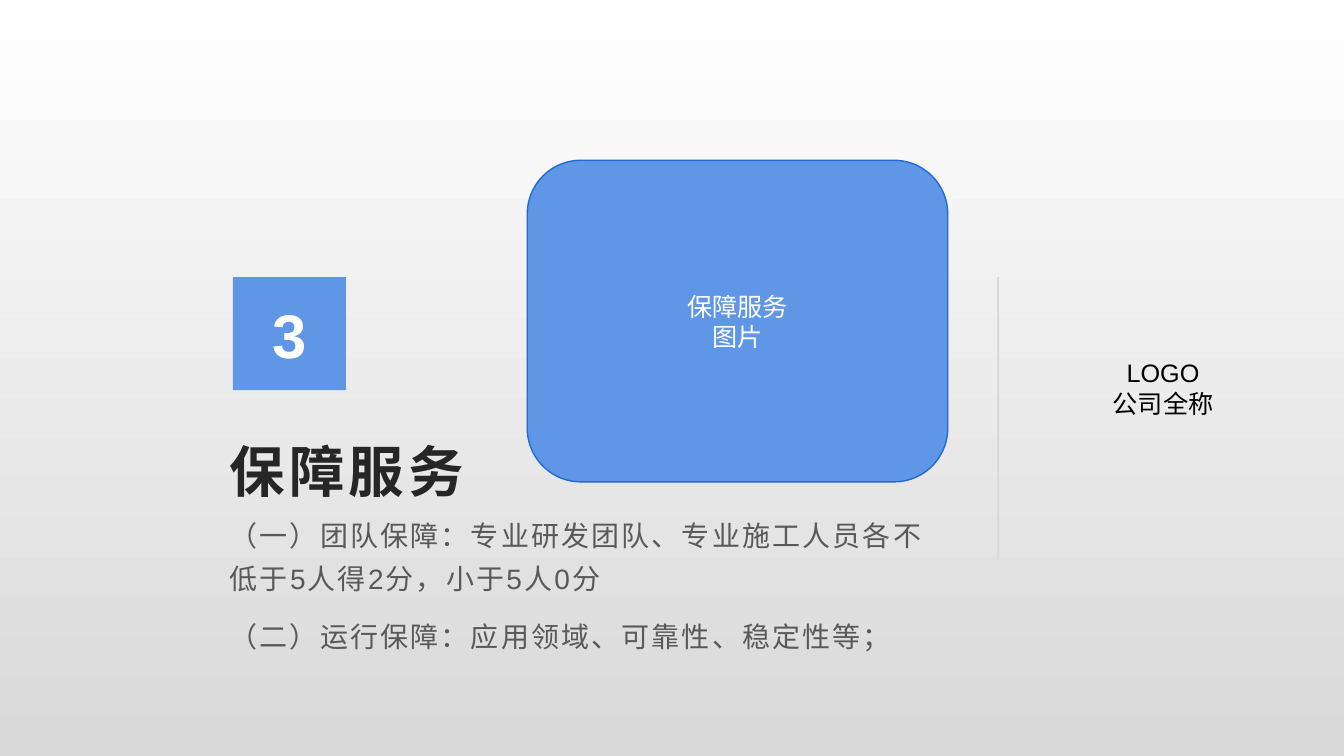
from dataclasses import dataclass

from pptx import Presentation
from pptx import util as u
from pptx.dml.color import RGBColor
from pptx.enum import shapes, text


@dataclass(frozen=True)
class Theme:
    """Colours, type sizes and font of the slide."""
    font: str = "Arial"
    accent: str = "6096E6"
    accent_edge: str = "2169D3"
    rule: str = "D9D9D9"
    white: str = "FFFFFF"
    black: str = "000000"
    heading: str = "262626"
    body: str = "595959"
    number_size: float = 44
    title_size: float = 39.6
    body_size: float = 20
    label_size: float = 18


def write(shape, content, size, color, font, bold=False, spacing=0, align=None,
          anchor=text.MSO_ANCHOR.TOP, line_spacing=None, space_after=None):
    """Fill a shape with one paragraph per line of content."""
    frame = shape.text_frame
    frame.word_wrap = True
    frame.vertical_anchor = anchor
    for index, line in enumerate(content.split("\n")):
        paragraph = frame.add_paragraph() if index else frame.paragraphs[0]
        paragraph.alignment = align
        paragraph.line_spacing = line_spacing
        if space_after is not None:
            paragraph.space_after = u.Pt(space_after)
        run = paragraph.add_run()
        run.text = line
        run.font.name = font
        run.font.size = u.Pt(size)
        run.font.bold = bold
        run.font.color.rgb = RGBColor.from_string(color)
        if spacing:
            run._r.get_or_add_rPr().set("spc", str(int(spacing * 100)))


class SlideBuilder:
    """Holds the theme and the current slide."""

    def __init__(self, slide, theme):
        self.slide = slide
        self.theme = theme

    def background(self, top, bottom):
        """Fill the slide with a vertical gradient."""
        fill = self.slide.background.fill
        fill.gradient()
        fill.gradient_angle = 270
        for stop, color, position in zip(fill.gradient_stops, (top, bottom), (0, 1)):
            stop.color.rgb = RGBColor.from_string(color)
            stop.position = position

    def text_box(self, box, content, **style):
        """Add a text box."""
        shape = self.slide.shapes.add_textbox(*map(u.Inches, box))
        write(shape, content, font=self.theme.font, **style)
        return shape

    def block(self, box, fill, kind=shapes.MSO_SHAPE.RECTANGLE, edge=None,
              content=None, **style):
        """Add a filled shape with an optional outline and centred text."""
        shape = self.slide.shapes.add_shape(kind, *map(u.Inches, box))
        shape.shadow.inherit = False
        shape.fill.solid()
        shape.fill.fore_color.rgb = RGBColor.from_string(fill)
        if edge:
            shape.line.color.rgb = RGBColor.from_string(edge)
            shape.line.width = u.Pt(1)
        else:
            shape.line.fill.background()
        if content:
            write(shape, content, font=self.theme.font, align=text.PP_ALIGN.CENTER,
                  anchor=text.MSO_ANCHOR.MIDDLE, **style)
        return shape


def main():
    """Build the section slide and save it."""
    theme = Theme()
    presentation = Presentation()
    presentation.slide_width = u.Inches(13.33)
    presentation.slide_height = u.Inches(7.5)
    slide = presentation.slides.add_slide(presentation.slide_layouts[6])
    builder = SlideBuilder(slide, theme)

    builder.background(theme.white, theme.rule)
    builder.text_box((10.09, 3.5, 2.89, 0.71), "LOGO\n公司全称",
                     size=theme.label_size, color=theme.black,
                     align=text.PP_ALIGN.CENTER)
    builder.text_box((2.18, 4.21, 7.23, 0.84), "保障服务",
                     size=theme.title_size, color=theme.heading, bold=True,
                     spacing=3, anchor=text.MSO_ANCHOR.BOTTOM)
    builder.text_box((2.18, 4.99, 7.23, 1.01),
                     "（一）团队保障：专业研发团队、专业施工人员各不低于5人得2分，小于5人0分\n"
                     "（二）运行保障：应用领域、可靠性、稳定性等；",
                     size=theme.body_size, color=theme.body, spacing=1.5,
                     line_spacing=1.3, space_after=10)
    builder.block((2.31, 2.75, 1.12, 1.12), theme.accent, content="3",
                  size=theme.number_size, color=theme.white, bold=True)
    builder.block((9.89, 2.75, 0.02, 2.8), theme.rule)
    builder.block((5.23, 1.59, 4.17, 3.19), theme.accent,
                  kind=shapes.MSO_SHAPE.ROUNDED_RECTANGLE, edge=theme.accent_edge,
                  content="保障服务\n图片", size=theme.label_size, color=theme.white)

    presentation.save("out.pptx")


if __name__ == "__main__":
    main()
